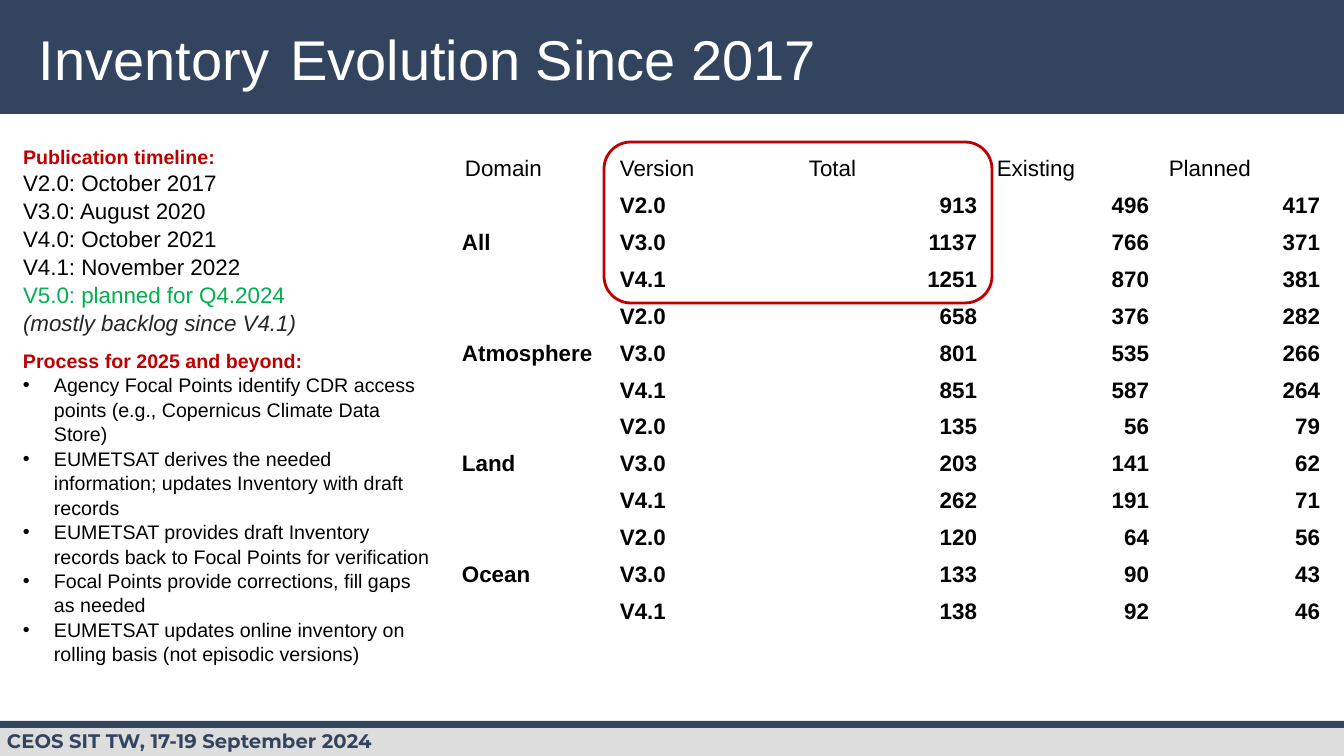
from lxml import etree
from pptx import Presentation
from pptx import util as u
from pptx.dml.color import RGBColor
from pptx.enum import shapes, text
from pptx.oxml.ns import qn

NAVY = RGBColor(0x33, 0x44, 0x5F)
GREY = RGBColor(0xDD, 0xDD, 0xDD)
RED = RGBColor(0xC0, 0x00, 0x00)
GREEN = RGBColor(0x00, 0xB0, 0x50)
CHARCOAL = RGBColor(0x26, 0x26, 0x26)
BLACK = RGBColor(0, 0, 0)
WHITE = RGBColor(0xFF, 0xFF, 0xFF)

PX = 914400 / 100.8
ALIGN = text.PP_ALIGN


def px(*lengths):
    return [u.Emu(round(length * PX)) for length in lengths]


class InventorySlide:
    """Style and drawing methods for the current slide."""

    font_name = "Arial"

    def __init__(self, deck):
        self.slide = deck.slides.add_slide(deck.slide_layouts[6])

    def style(self, font, size, color, bold=False, name=None):
        font.name = name or self.font_name
        font.size = u.Pt(size)
        font.color.rgb = color
        font.bold = bold

    def shape(self, kind, box, fill=None, line=None):
        shape = self.slide.shapes.add_shape(kind, *px(*box))
        shape.shadow.inherit = False
        if fill is None:
            shape.fill.background()
        else:
            shape.fill.solid()
            shape.fill.fore_color.rgb = fill
        if line is None:
            shape.line.fill.background()
        else:
            shape.line.color.rgb = line
            shape.line.width = u.Pt(2)
        return shape

    def band(self, box, fill):
        return self.shape(shapes.MSO_SHAPE.RECTANGLE, box, fill)

    def text_box(self, box, top_inset=5):
        frame = self.slide.shapes.add_textbox(*px(*box)).text_frame
        frame.word_wrap = True
        frame.margin_left, frame.margin_right = px(10, 10)
        frame.margin_top, frame.margin_bottom = px(top_inset, 5)
        return frame

    def line(self, frame, runs, size, color, bold=False, bullet=False,
             spacing=None, name=None):
        paragraph = frame.paragraphs[0]
        if paragraph.runs:
            paragraph = frame.add_paragraph()
        if bullet:
            self.bullet(paragraph)
        if spacing:
            paragraph.line_spacing = spacing
        self.style(paragraph.font, size, color, bold, name)
        for words in runs:
            paragraph.add_run().text = words
        return paragraph

    def bullet(self, paragraph):
        properties = paragraph._p.get_or_add_pPr()
        indent = px(31)[0]
        properties.set("marL", str(indent))
        properties.set("indent", str(-indent))
        etree.SubElement(properties, qn("a:buFont")).set("typeface", self.font_name)
        etree.SubElement(properties, qn("a:buChar")).set("char", "•")

    def table(self, left, top, widths, row_height, row_count):
        frame = self.slide.shapes.add_table(
            row_count, len(widths),
            *px(left, top, sum(widths), row_height * row_count))
        table = frame.table
        table.horz_banding = False
        for column, width in zip(table.columns, px(*widths)):
            column.width = width
        for row in table.rows:
            row.height = px(row_height)[0]
        for cell in table.iter_cells():
            cell.fill.background()
        return table

    def cell(self, cell, words, bold=True, align=ALIGN.LEFT, insets=(10, 5)):
        cell.text = words
        side, end = px(*insets)
        cell.margin_left = cell.margin_right = side
        cell.margin_top = cell.margin_bottom = end
        cell.vertical_anchor = text.MSO_ANCHOR.MIDDLE if bold else text.MSO_ANCHOR.TOP
        paragraph = cell.text_frame.paragraphs[0]
        paragraph.alignment = align
        self.style(paragraph.font, 16, BLACK, bold)


HEADERS = ["Domain", "Version", "Total", "Existing", "Planned"]
VERSIONS = ["V2.0", "V3.0", "V4.1"]
# Total, existing and planned records for each version
RECORDS = {
    "All": [(913, 496, 417), (1137, 766, 371), (1251, 870, 381)],
    "Atmosphere": [(658, 376, 282), (801, 535, 266), (851, 587, 264)],
    "Land": [(135, 56, 79), (203, 141, 62), (262, 191, 71)],
    "Ocean": [(120, 64, 56), (133, 90, 43), (138, 92, 46)],
}
RELEASES = ["V2.0: October 2017", "V3.0: August 2020",
            "V4.0: October 2021", "V4.1: November 2022"]
PROCESS_STEPS = [
    "Agency Focal Points identify CDR access points (e.g., Copernicus Climate Data Store)",
    "EUMETSAT derives the needed information; updates Inventory with draft records",
    "EUMETSAT provides draft Inventory records back to Focal Points for verification",
    "Focal Points provide corrections, fill gaps as needed",
    "EUMETSAT updates online inventory on rolling basis (not episodic versions)",
]
LEADING = 1.04


def main():
    deck = Presentation()
    deck.slide_width, deck.slide_height = px(1344, 756)
    page = InventorySlide(deck)

    # Header and footer bands
    page.band((0, 0, 1344, 114), NAVY)
    page.band((0, 725, 1344, 31), GREY)
    page.band((0, 721, 1344, 7), NAVY)
    footer = page.text_box((-3, 724, 543, 32))
    page.line(footer, ["CEOS SIT TW, 17-19 September 2024"], 14, NAVY,
              bold=True, name="Montserrat")

    # Title, with a slightly widened first word gap
    title = page.text_box((29, 15, 918, 126), top_inset=10)
    heading = page.line(title, ["Inventory", " ", "Evolution Since 2017"], 40, WHITE)
    heading.runs[1]._r.get_or_add_rPr().set("spc", "400")

    # Records by domain and version
    records = page.table(455, 151, [155, 189, 188, 172, 171], 36,
                         1 + len(RECORDS) * len(VERSIONS))
    for column, header in enumerate(HEADERS):
        page.cell(records.cell(0, column), header, bold=False)
    for group, (domain, counts) in enumerate(RECORDS.items()):
        first = 1 + group * len(VERSIONS)
        domain_cell = records.cell(first, 0)
        domain_cell.merge(records.cell(first + len(VERSIONS) - 1, 0))
        page.cell(domain_cell, domain, align=ALIGN.JUSTIFY, insets=(7, 0))
        for row, (version, values) in enumerate(zip(VERSIONS, counts), first):
            page.cell(records.cell(row, 1), version)
            for column, value in enumerate(values, 2):
                page.cell(records.cell(row, column), str(value), align=ALIGN.RIGHT)

    # Publication timeline
    timeline = page.text_box((13, 139, 325, 197))
    page.line(timeline, ["Publication timeline:"], 14, RED, bold=True, spacing=LEADING)
    for release in RELEASES:
        page.line(timeline, [release], 16, BLACK, spacing=LEADING)
    planned = page.line(
        timeline, ["V5.0: planned for Q4.2024 ", "(mostly backlog since V4.1)"],
        16, GREEN, spacing=LEADING)
    backlog = planned.runs[1].font
    backlog.color.rgb = CHARCOAL
    backlog.italic = True

    # Future process
    process = page.text_box((13, 343, 427, 319))
    page.line(process, ["Process for 2025 and beyond:"], 14, RED, bold=True,
              spacing=LEADING)
    for step in PROCESS_STEPS:
        page.line(process, [step], 14, BLACK, bullet=True, spacing=LEADING)

    # Highlight around the overall totals
    page.shape(shapes.MSO_SHAPE.ROUNDED_RECTANGLE, (604, 142, 388, 161), line=RED)

    deck.save("out.pptx")


if __name__ == "__main__":
    main()
